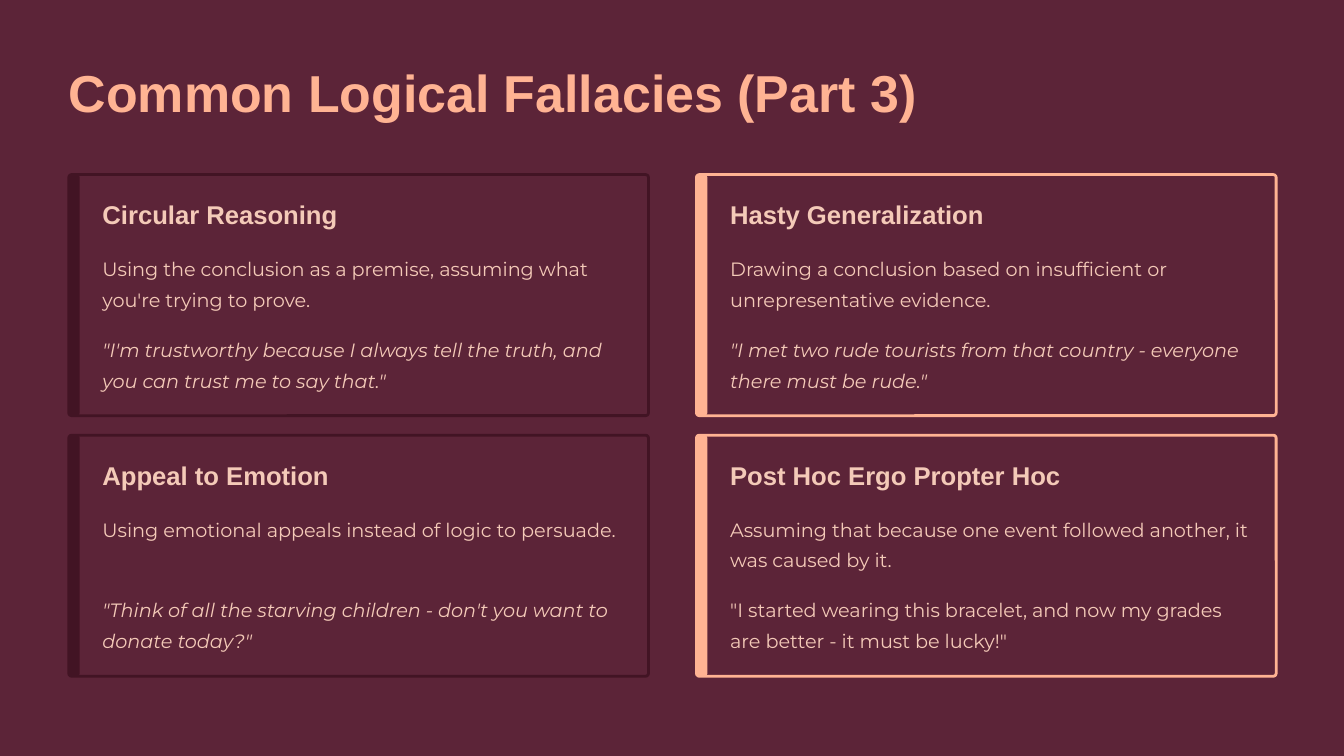
from pptx import Presentation
from pptx.dml.color import RGBColor
from pptx.enum.shapes import MSO_SHAPE
from pptx.enum.text import MSO_ANCHOR, MSO_AUTO_SIZE, PP_ALIGN
from pptx.util import Cm, Pt

ROUNDED = MSO_SHAPE.ROUNDED_RECTANGLE
TOP = MSO_ANCHOR.TOP
NO_AUTOFIT = MSO_AUTO_SIZE.NONE
LEFT = PP_ALIGN.LEFT

COLORS = {
    "plum": "5C2438",
    "wine": "421424",
    "peach": "FFB393",
    "blush": "F4CAB8",
}

# Card grid, in centimetres
GRID_LEFT, GRID_TOP = 2.08, 5.28
CARD_WIDTH, CARD_HEIGHT = 17.53, 7.29
COLUMN_STEP, ROW_STEP = 18.98, 7.88
BAR_WIDTH = 0.33
TEXT_INDENT = 1.02

# One column per accent: (name, definition, example, example in italics)
COLUMNS = [
    ("wine", [
        ("Circular Reasoning",
         "Using the conclusion as a premise, assuming what you're trying to prove.",
         "\"I'm trustworthy because I always tell the truth, and you can trust me to say that.\"",
         True),
        ("Appeal to Emotion",
         "Using emotional appeals instead of logic to persuade.",
         "\"Think of all the starving children - don't you want to donate today?\"",
         True),
    ]),
    ("peach", [
        ("Hasty Generalization",
         "Drawing a conclusion based on insufficient or unrepresentative evidence.",
         "\"I met two rude tourists from that country - everyone there must be rude.\"",
         True),
        ("Post Hoc Ergo Propter Hoc",
         "Assuming that because one event followed another, it was caused by it.",
         "\"I started wearing this bracelet, and now my grades are better - it must be lucky!\"",
         False),
    ]),
]


def rgb(color):
    return RGBColor.from_string(COLORS[color])


def set_text(holder, text, size, spacing, font, color, bold=False, italic=False):
    frame = holder.text_frame
    frame.text = text
    frame.word_wrap = True
    frame.auto_size = NO_AUTOFIT
    frame.vertical_anchor = TOP
    frame.margin_left = frame.margin_right = 0
    frame.margin_top = frame.margin_bottom = 0
    paragraph = frame.paragraphs[0]
    paragraph.alignment = LEFT
    paragraph.line_spacing = Pt(spacing)
    paragraph.space_before = Pt(0)
    style = paragraph.runs[0].font
    style.name, style.size = font, Pt(size)
    style.bold, style.italic = bold, italic
    style.color.rgb = rgb(color)


def add_title(slide, text):
    title = slide.shapes.title
    title.left, title.top = Cm(GRID_LEFT), Cm(1.75)
    title.width, title.height = Cm(27), Cm(1.98)
    set_text(title, text, 44.5, 56, "Arial", "peach", bold=True)


def add_panel(slide, left, top, width, rounding, fill, outline=None):
    panel = slide.shapes.add_shape(
        ROUNDED, Cm(left), Cm(top), Cm(width), Cm(CARD_HEIGHT))
    panel.adjustments[0] = rounding
    panel.shadow.inherit = False
    panel.fill.solid()
    panel.fill.fore_color.rgb = rgb(fill)
    if outline:
        panel.line.color.rgb = rgb(outline)
        panel.line.width = Pt(2.4)
    else:
        panel.line.fill.background()


def add_label(slide, left, top, width, height, text, *style, **emphasis):
    label = slide.shapes.add_textbox(Cm(left), Cm(top), Cm(width), Cm(height))
    set_text(label, text, *style, **emphasis)


def add_card(slide, left, top, accent, fallacy):
    name, definition, example, slanted = fallacy
    body_style = (16.5, 26.5, "Montserrat", "blush")
    text_left = left + TEXT_INDENT
    add_panel(slide, left, top, CARD_WIDTH, 0.012, "plum", accent)
    add_panel(slide, left, top, BAR_WIDTH, 0.263, accent)
    add_label(slide, text_left, top + 0.69, 10.5, 0.99, name,
              22, 28, "Arial", "blush", bold=True)
    add_label(slide, text_left, top + 2.26, 15.82, 1.9, definition, *body_style)
    add_label(slide, text_left, top + 4.7, 15.82, 1.9, example, *body_style,
              italic=slanted)


def main():
    deck = Presentation()
    deck.slide_width, deck.slide_height = Cm(40.64), Cm(22.86)
    slide = deck.slides.add_slide(deck.slide_layouts[5])

    # Background and title
    slide.background.fill.solid()
    slide.background.fill.fore_color.rgb = rgb("plum")
    add_title(slide, "Common Logical Fallacies (Part 3)")

    # Fallacy cards
    for column, (accent, fallacies) in enumerate(COLUMNS):
        for row, fallacy in enumerate(fallacies):
            add_card(slide, GRID_LEFT + column * COLUMN_STEP,
                     GRID_TOP + row * ROW_STEP, accent, fallacy)

    deck.save("out.pptx")


if __name__ == "__main__":
    main()
